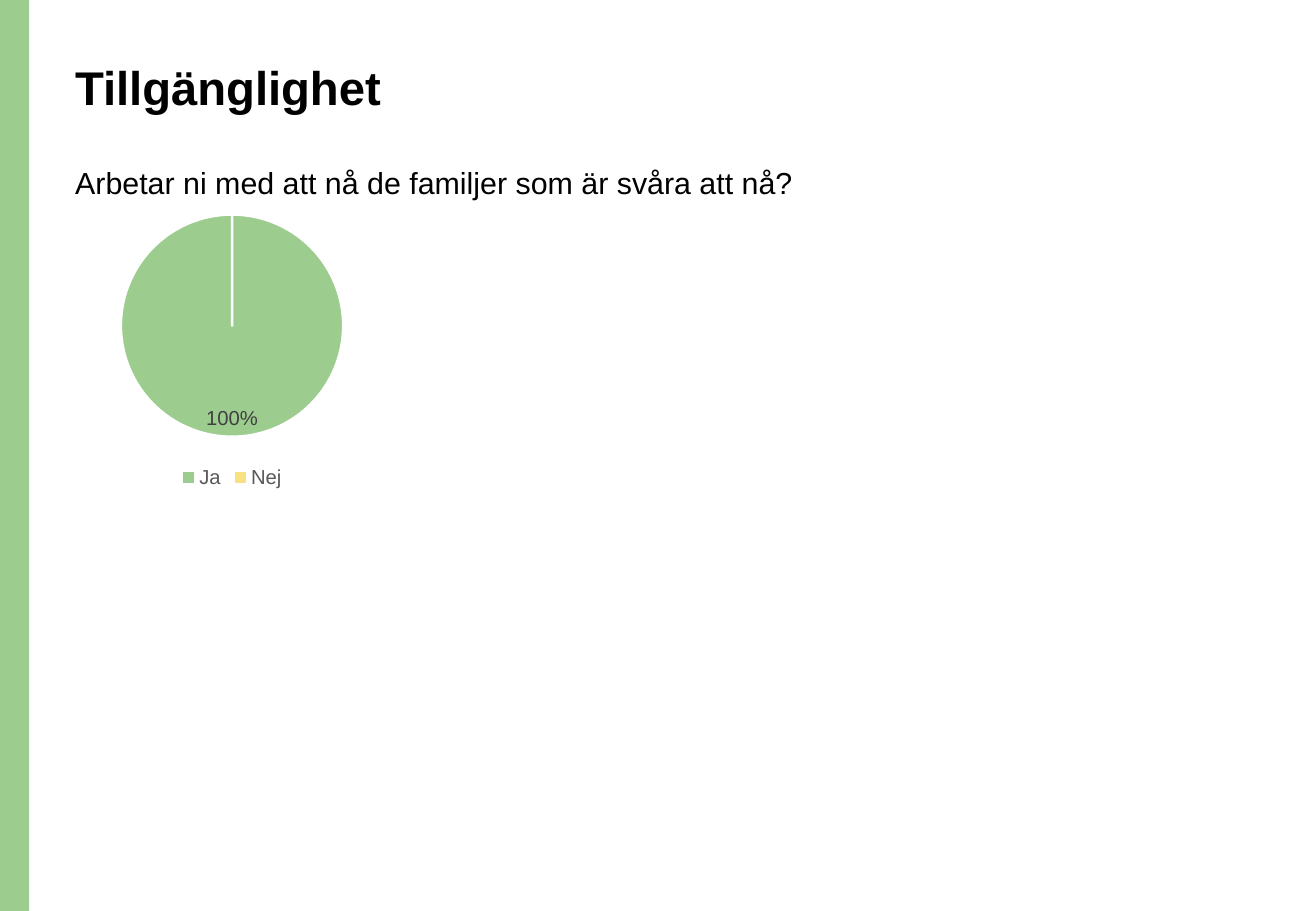
"""Build the accessibility slide: side band, title, question and answer pie."""
from dataclasses import dataclass

from pptx import Presentation
from pptx.chart.data import CategoryChartData
from pptx.dml.color import RGBColor
from pptx.enum.chart import XL_CHART_TYPE, XL_LABEL_POSITION, XL_LEGEND_POSITION
from pptx.enum.shapes import MSO_SHAPE
from pptx.oxml import parse_xml
from pptx.oxml.ns import nsdecls
from pptx.util import Inches, Pt

PIE = XL_CHART_TYPE.PIE
INSIDE_END = XL_LABEL_POSITION.INSIDE_END
BOTTOM = XL_LEGEND_POSITION.BOTTOM
RECTANGLE = MSO_SHAPE.RECTANGLE
SLIDE_WIDTH, SLIDE_HEIGHT = 10.83, 7.5
LEFT_MARGIN = 0.52


@dataclass(frozen=True)
class Theme:
    """Hold the colours and type styles of the slide."""

    font: str = "Arial"
    black: str = "000000"
    white: str = "FFFFFF"
    green: str = "9DCC8F"
    yellow: str = "F6E183"
    label_grey: str = "404040"
    legend_grey: str = "595959"
    title_size: int = 28
    question_size: int = 18
    chart_size: int = 10
    label_size: int = 12


THEME = Theme()


def style_font(font, size, color, bold=False):
    """Apply the theme typeface with a size, colour and weight."""
    values = {"name": THEME.font, "size": Pt(size), "bold": bold}
    for name, value in values.items():
        setattr(font, name, value)
    font.color.rgb = RGBColor.from_string(color)


def fill_solid(fill, color):
    """Fill with one colour."""
    fill.solid()
    fill.fore_color.rgb = RGBColor.from_string(color)


def add_band(page, width):
    """Add the full-height band at the left edge."""
    band = page.shapes.add_shape(RECTANGLE, 0, 0, Inches(width), Inches(SLIDE_HEIGHT))
    band.shadow.inherit = False
    fill_solid(band.fill, THEME.green)
    band.line.fill.background()


def add_text(page, text, top, width, height, size, bold=False):
    """Add a wrapped line of text at the left margin."""
    box = page.shapes.add_textbox(*map(Inches, (LEFT_MARGIN, top, width, height)))
    box.text_frame.word_wrap = True
    para = box.text_frame.paragraphs[0]
    para.line_spacing = 0.9
    span = para.add_run()
    span.text = text
    style_font(span.font, size, THEME.black, bold)


def place_plot(chart, **shares):
    """Fix the inner plot area as shares of the chart frame."""
    area = chart.plots[0]._element.getparent()
    for old in area.xpath("c:layout"):
        area.remove(old)
    sizes = "".join(f'<c:{key} val="{share}"/>' for key, share in shares.items())
    area.insert(0, parse_xml(
        f'<c:layout {nsdecls("c")}><c:manualLayout><c:layoutTarget val="inner"/>'
        f'<c:xMode val="edge"/><c:yMode val="edge"/>{sizes}</c:manualLayout></c:layout>'))


def style_labels(series, hidden_index):
    """Show values as percentages, without the label of the empty slice."""
    labels = series.data_labels
    values = {"show_value": True, "number_format": "0%",
              "number_format_is_linked": False, "position": INSIDE_END}
    for name, value in values.items():
        setattr(labels, name, value)
    style_font(labels.font, THEME.label_size, THEME.label_grey)
    labels._element.insert(0, parse_xml(
        f'<c:dLbl {nsdecls("c")}><c:idx val="{hidden_index}"/><c:delete val="1"/></c:dLbl>'))


def add_pie(page, answers, top, width, height):
    """Add the pie of answers with its legend below."""
    data = CategoryChartData()
    data.categories = list(answers)
    data.add_series("Series 1", [share for share, _ in answers.values()])
    frame = page.shapes.add_chart(
        PIE, *map(Inches, (LEFT_MARGIN, top, width, height)), data)
    chart = frame.chart
    chart.has_title = False
    style_font(chart.font, THEME.chart_size, THEME.black)
    chart.has_legend = True
    chart.legend.position = BOTTOM
    chart.legend.include_in_layout = False
    style_font(chart.legend.font, THEME.label_size, THEME.legend_grey)
    chart.plots[0].vary_by_categories = True
    series = chart.plots[0].series[0]
    for index, (_, color) in enumerate(answers.values()):
        look = series.points[index].format
        fill_solid(look.fill, color)
        fill_solid(look.line.fill, THEME.white)
        look.line.width = Pt(1.5)
    style_labels(series, hidden_index=1)
    place_plot(chart, x=0.17, y=0.06, w=0.66, h=0.75)


def main():
    """Assemble and save the slide."""
    deck = Presentation()
    deck.slide_width, deck.slide_height = Inches(SLIDE_WIDTH), Inches(SLIDE_HEIGHT)
    page = deck.slides.add_slide(deck.slide_layouts[6])
    add_band(page, 0.24)
    add_text(page, "Tillgänglighet", 0.48, 9.34, 1.02, THEME.title_size, bold=True)
    add_text(page, "Arbetar ni med att nå de familjer som är svåra att nå?",
             1.34, 7.01, 0.57, THEME.question_size)
    add_pie(page, {"Ja": (1, THEME.green), "Nej": (0, THEME.yellow)}, 1.62, 2.78, 2.44)
    deck.save("out.pptx")


if __name__ == "__main__":
    main()
